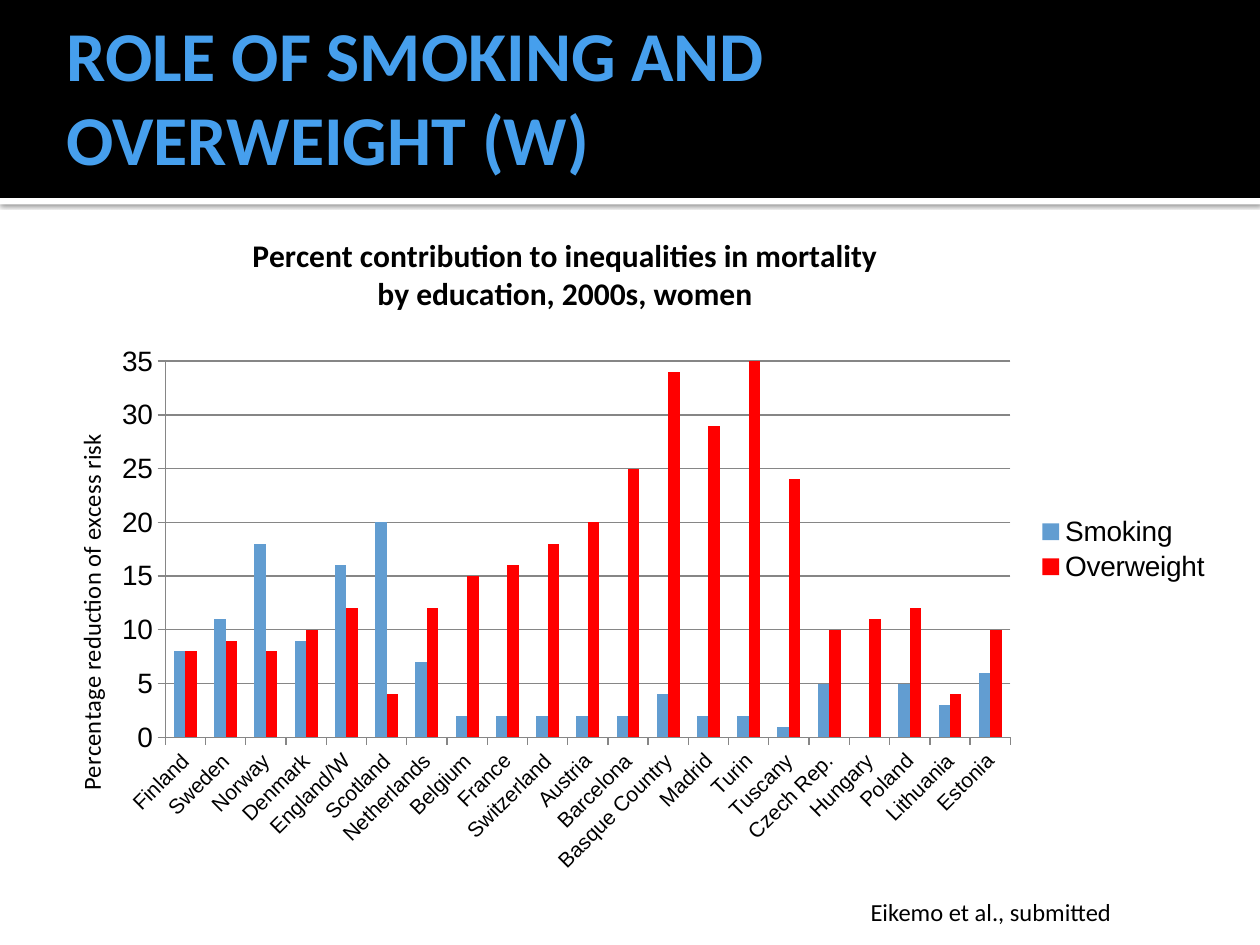
from lxml.etree import SubElement
from pptx import Presentation
from pptx.chart.data import CategoryChartData
from pptx.dml.color import RGBColor
from pptx.enum.chart import XL_CHART_TYPE, XL_LEGEND_POSITION, XL_TICK_MARK
from pptx.enum.shapes import MSO_SHAPE
from pptx.enum.text import MSO_ANCHOR, PP_ALIGN
from pptx.oxml import parse_xml
from pptx.oxml.ns import nsdecls, qn
from pptx.util import Cm, Pt

COLORS = {
    "black": "000000",
    "white": "FFFFFF",
    "title": "469FED",
    "smoking": "629DD1",
    "overweight": "FF0000",
    "grid": "868686",
}
SLIDE_WIDTH, SLIDE_HEIGHT = Cm(25.4), Cm(19.05)
BANNER_HEIGHT = Cm(3.99)

# Country or region: (smoking, overweight)
CONTRIBUTIONS = {
    "Finland": (8, 8), "Sweden": (11, 9), "Norway": (18, 8),
    "Denmark": (9, 10), "England/W": (16, 12), "Scotland": (20, 4),
    "Netherlands": (7, 12), "Belgium": (2, 15), "France": (2, 16),
    "Switzerland": (2, 18), "Austria": (2, 20), "Barcelona": (2, 25),
    "Basque Country": (4, 34), "Madrid": (2, 29), "Turin": (2, 42),
    "Tuscany": (1, 24), "Czech Rep.": (5, 10), "Hungary": (0, 11),
    "Poland": (5, 12), "Lithuania": (3, 4), "Estonia": (6, 10),
}


def color(name):
    return RGBColor.from_string(COLORS[name])


def format_font(font, size, name="Calibri", color_name="black", bold=False):
    font.size, font.name, font.bold = Pt(size), name, bold
    font.color.rgb = color(color_name)


def write_text(text_frame, text, align=PP_ALIGN.LEFT, **font_format):
    """Put each line of the text in a paragraph of its own."""
    text_frame.text = text
    for paragraph in text_frame.paragraphs:
        paragraph.alignment = align
        for run in paragraph.runs:
            format_font(run.font, **font_format)


def add_band(slide, top, height, color_name):
    """Add a full-width bar behind the placeholders."""
    shape = slide.shapes.add_shape(MSO_SHAPE.RECTANGLE, 0, top, SLIDE_WIDTH, height)
    shape.shadow.inherit = False
    shape.fill.solid()
    shape.fill.fore_color.rgb = color(color_name)
    shape.line.fill.background()
    slide.shapes._spTree.insert(2, shape._element)
    return shape


def add_drop_shadow(shape):
    effects = shape._element.spPr.find(qn("a:effectLst"))
    effects.append(parse_xml(
        f'<a:outerShdw {nsdecls("a")} blurRad="31750" dist="10160" dir="5400000">'
        f'<a:srgbClr val="{COLORS["black"]}"><a:alpha val="60000"/></a:srgbClr>'
        '</a:outerShdw>'))


def set_title(slide, text):
    title = slide.shapes.title
    title.left, title.top = Cm(1.09), Cm(0.33)
    title.width, title.height = Cm(22.81), Cm(3.18)
    frame = title.text_frame
    frame.word_wrap, frame.vertical_anchor = True, MSO_ANCHOR.MIDDLE
    frame.margin_left = Cm(0.25)
    frame.margin_right = frame.margin_top = frame.margin_bottom = Cm(0.13)
    write_text(frame, text, size=40, color_name="title", bold=True)


def place(element, after, inner=False, **fractions):
    """Set a manual layout, in fractions of the chart, after the named child."""
    for old_layout in element.findall(qn("c:layout")):
        element.remove(old_layout)
    layout = parse_xml(f'<c:layout {nsdecls("c")}><c:manualLayout/></c:layout>')
    settings = {"layoutTarget": "inner"} if inner else {}
    settings.update(xMode="edge", yMode="edge", **fractions)
    for tag, value in settings.items():
        SubElement(layout[0], qn(f"c:{tag}")).set("val", str(value))
    if after is None:
        element.insert(0, layout)
    else:
        element.find(qn(after)).addnext(layout)


def format_axis(axis, size):
    format_font(axis.tick_labels.font, size, "Arial")
    axis.major_tick_mark = XL_TICK_MARK.OUTSIDE
    axis.minor_tick_mark = XL_TICK_MARK.NONE
    axis.format.line.color.rgb = color("grid")
    axis.format.line.width = Pt(0.75)


def format_axes(chart):
    categories, values = chart.category_axis, chart.value_axis
    format_axis(categories, 12)
    categories._element.txPr.bodyPr.set("rot", "-2700000")
    format_axis(values, 16)
    values.minimum_scale, values.maximum_scale, values.major_unit = 0, 35, 5
    values.major_gridlines.format.line.color.rgb = color("grid")
    values.major_gridlines.format.line.width = Pt(0.75)
    write_text(values.axis_title.text_frame, "Percentage reduction of excess risk",
               align=PP_ALIGN.CENTER, size=14)
    place(values.axis_title._element, "c:tx", x=0.03, y=0.33)


def add_contribution_chart(slide):
    data = CategoryChartData()
    data.categories = list(CONTRIBUTIONS)
    smoking, overweight = zip(*CONTRIBUTIONS.values())
    data.add_series("Smoking", smoking)
    data.add_series("Overweight", overweight)
    chart = slide.shapes.add_chart(
        XL_CHART_TYPE.COLUMN_CLUSTERED, Cm(0.69), Cm(4.11), Cm(24), Cm(13.79), data).chart
    format_font(chart.font, 18)

    write_text(chart.chart_title.text_frame,
               "Percent contribution to inequalities in mortality\nby education, 2000s, women",
               align=PP_ALIGN.CENTER, size=18, bold=True)
    place(chart.chart_title._element, "c:tx", x=0.18, y=0.04)
    format_axes(chart)

    plot = chart.plots[0]
    plot.gap_width, plot.overlap, plot.vary_by_categories = 150, 0, False
    for series, color_name in zip(plot.series, ("smoking", "overweight")):
        series.format.fill.solid()
        series.format.fill.fore_color.rgb = color(color_name)
        series.invert_if_negative = False
    place(chart._chartSpace.chart.plotArea, None, inner=True, x=0.11, y=0.23, w=0.71, h=0.55)

    chart.has_legend = True
    chart.legend.position = XL_LEGEND_POSITION.RIGHT
    chart.legend.include_in_layout = False
    format_font(chart.legend.font, 16, "Arial")
    place(chart.legend._element, "c:legendPos", x=0.84, y=0.45, w=0.15, h=0.11)


def add_citation(slide, text):
    box = slide.shapes.add_textbox(Cm(17.3), Cm(17.96), Cm(7.01), Cm(0.86))
    box.text_frame.word_wrap = True
    write_text(box.text_frame, text, size=14)


def main():
    presentation = Presentation()
    presentation.slide_width, presentation.slide_height = SLIDE_WIDTH, SLIDE_HEIGHT
    slide = presentation.slides.add_slide(presentation.slide_layouts[5])
    add_band(slide, 0, BANNER_HEIGHT, "black")
    add_drop_shadow(add_band(slide, BANNER_HEIGHT, Cm(0.13), "white"))
    set_title(slide, "ROLE OF SMOKING AND OVERWEIGHT (W)")
    add_contribution_chart(slide)
    add_citation(slide, "Eikemo et al., submitted")
    presentation.save("out.pptx")


if __name__ == "__main__":
    main()
